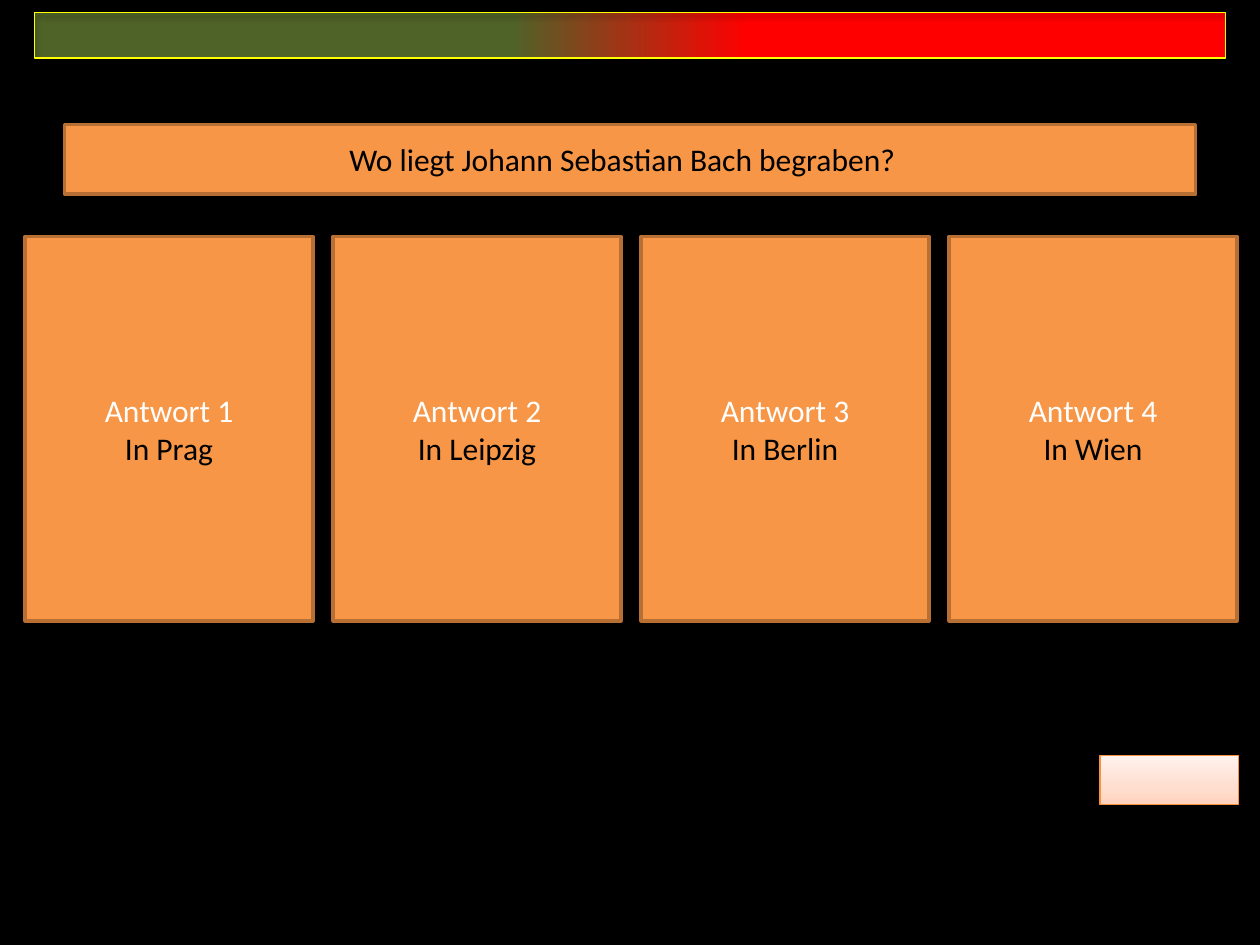
import dataclasses
import typing

import pptx
import pptx.dml.color
import pptx.enum.shapes
import pptx.enum.text
import pptx.oxml
import pptx.oxml.ns
import pptx.util

Pt = pptx.util.Pt
Stops = typing.Sequence[typing.Tuple[int, str]]


@dataclasses.dataclass(frozen=True)
class Theme:
    back: str = "000000"
    card: str = "F79646"
    edge: str = "B76F34"
    light: str = "FFFFFF"
    dark: str = "000000"
    frame: str = "FFFF00"
    rim: str = "F69240"
    bar: Stops = ((40, "4F6228"), (60, "FF0000"))
    peach: Stops = ((0, "FFD2BD"), (35, "FFDED0"), (100, "FFF2ED"))
    font: str = "Calibri"
    size: float = 18
    thick: float = 2
    thin: float = 0.75


@dataclasses.dataclass(frozen=True)
class Box:
    left: float
    top: float
    width: float
    height: float


THEME = Theme()


def color(code: str):
    return pptx.dml.color.RGBColor.from_string(code)


def draw(slide, box: Box, fill: typing.Optional[str] = None,
         line: typing.Optional[str] = None, width: float = THEME.thin):
    shape = slide.shapes.add_shape(
        pptx.enum.shapes.MSO_SHAPE.RECTANGLE,
        Pt(box.left), Pt(box.top), Pt(box.width), Pt(box.height))
    shape.shadow.inherit = False
    if fill:
        shape.fill.solid()
        shape.fill.fore_color.rgb = color(fill)
    else:
        shape.fill.background()
    if line:
        shape.line.color.rgb = color(line)
        shape.line.width = Pt(width)
    else:
        shape.line.fill.background()
    return shape


def blend(shape, stops: Stops, angle: float) -> None:
    """Fill with a gradient; the angle runs counter-clockwise."""
    shape.fill.gradient()
    shape.fill.gradient_angle = angle
    names = pptx.oxml.ns.nsdecls("a")
    marks = "".join(f'<a:gs pos="{pos * 1000}"><a:srgbClr val="{code}"/></a:gs>'
                    for pos, code in stops)
    old = shape.element.spPr.find(".//" + pptx.oxml.ns.qn("a:gsLst"))
    old.getparent().replace(
        old, pptx.oxml.parse_xml(f"<a:gsLst {names}>{marks}</a:gsLst>"))


def shade(shape, alpha: int, dist: float) -> None:
    """Cast a soft black shadow straight down."""
    names = pptx.oxml.ns.nsdecls("a")
    glow = pptx.oxml.parse_xml(
        f'<a:outerShdw {names} blurRad="{Pt(3.1)}" dist="{Pt(dist)}" '
        f'dir="5400000" rotWithShape="0"><a:srgbClr val="{THEME.dark}">'
        f'<a:alpha val="{alpha * 1000}"/></a:srgbClr></a:outerShdw>')
    shape.element.spPr.find(pptx.oxml.ns.qn("a:effectLst")).append(glow)


def write(shape, text: str, *, tint: str, first: bool = True,
          size: float = THEME.size, font: str = THEME.font) -> None:
    frame = shape.text_frame
    frame.word_wrap = True
    frame.vertical_anchor = pptx.enum.text.MSO_ANCHOR.MIDDLE
    para = frame.paragraphs[0] if first else frame.add_paragraph()
    para.alignment = pptx.enum.text.PP_ALIGN.CENTER
    run = para.add_run()
    run.text = text
    run.font.name = font
    run.font.size = Pt(size)
    run.font.color.rgb = color(tint)


def main() -> None:
    deck = pptx.Presentation()
    deck.slide_width, deck.slide_height = Pt(720), Pt(540)
    slide = deck.slides.add_slide(deck.slide_layouts[6])
    slide.background.fill.solid()
    slide.background.fill.fore_color.rgb = color(THEME.back)

    # Progress bar and its frame
    strip = Box(19.8, 7.2, 680.4, 26)
    bar = draw(slide, strip)
    blend(bar, THEME.bar, 0)
    frame = draw(slide, strip, line=THEME.frame)
    for part in (bar, frame):
        shade(part, 35, 1.8)

    # Answer cards
    for num, place in enumerate(("Prag", "Leipzig", "Berlin", "Wien")):
        card = draw(slide, Box(14.4 + 176 * num, 135.2, 164.4, 219.6),
                    THEME.card, THEME.edge, THEME.thick)
        write(card, f"Antwort {num + 1}", tint=THEME.light)
        write(card, f"In {place}", tint=THEME.dark, first=False)

    # Question, set slightly left of centre
    quest = draw(slide, Box(36.9, 71.2, 646.4, 39.8),
                 THEME.card, THEME.edge, THEME.thick)
    quest.text_frame.margin_right = Pt(16)
    write(quest, "Wo liegt Johann Sebastian Bach begraben?", tint=THEME.dark)

    # Blank button
    button = draw(slide, Box(628.6, 431.6, 79.2, 28), line=THEME.rim)
    blend(button, THEME.peach, 90)
    shade(button, 38, 1.6)

    deck.save("out.pptx")


if __name__ == "__main__":
    main()
